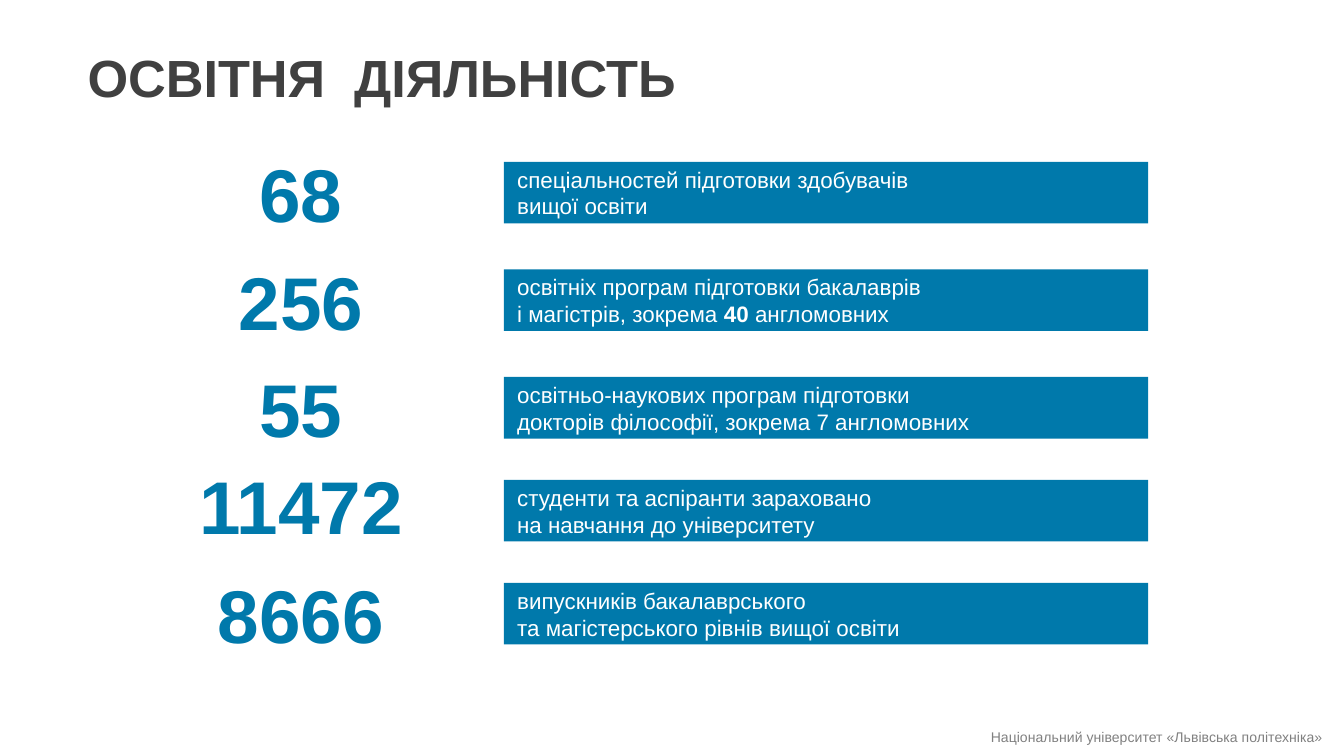
from copy import deepcopy

from pptx import Presentation
from pptx import util as u
from pptx.dml.color import RGBColor
from pptx.enum import shapes, text
from pptx.oxml import ns

COLORS = {"blue": "0079AB", "title": "404040", "footer": "808080", "white": "FFFFFF"}
FONT = "Arial"
TIGHT = (3, 1.5)
WIDE = (7.2, 3.6)
ROWS = [
    (86.7, "68", 1, "спеціальностей підготовки здобувачів\vвищої освіти"),
    (144.3, "256", 1, "освітніх програм підготовки бакалаврів\v"
                      "і магістрів, зокрема *40 *англомовних"),
    (202, "55", 1, "освітньо-наукових програм підготовки\n"
                   "докторів філософії, зокрема 7 англомовних"),
    (257.1, "11472", 0.9, "студенти та аспіранти зараховано\vна навчання до університету"),
    (312.3, "8666", 1, "випускників бакалаврського\vта магістерського рівнів вищої освіти"),
]


def points(*lengths):
    """Turn plain numbers into lengths in points."""
    return [u.Pt(length) for length in lengths]


def write(box, words, size, color, bold=False, align="LEFT", anchor="MIDDLE", pad=TIGHT, wrap=True):
    """Fill a shape with text; parts between asterisks turn bold."""
    frame = box.text_frame
    frame.auto_size = text.MSO_AUTO_SIZE.NONE
    frame.word_wrap = wrap
    frame.vertical_anchor = text.MSO_ANCHOR[anchor]
    frame.margin_left = frame.margin_right = u.Pt(pad[0])
    frame.margin_top = frame.margin_bottom = u.Pt(pad[1])
    first, *others = words.split("*")
    frame.text = first
    for part in others:
        frame.paragraphs[-1].add_run().text = part
    for para in frame.paragraphs:
        para.alignment = text.PP_ALIGN[align]
        for span in para.runs:
            span.font.name = FONT
            span.font.size = u.Pt(size)
            span.font.bold = bold or span.text in others[::2]
            span.font.color.rgb = RGBColor.from_string(COLORS[color])
        for line_break in para._p.findall(ns.qn("a:br")):
            line_break.insert(0, deepcopy(para.runs[0]._r.rPr))
    return frame


def add_title(page, left, top, width, height):
    """Place the heading in the title placeholder."""
    title = page.shapes.title
    title.left, title.top, title.width, title.height = points(left, top, width, height)
    write(title, "ОСВІТНЯ  ДІЯЛЬНІСТЬ", 28, "title", bold=True, anchor="TOP", wrap=False)


def add_row(page, left, top, width, height, number, spacing, caption):
    """Place a large number and its caption bar, centred on one line."""
    bar_left, number_width, number_height = left + 196.6, 175.7, 51.1 * spacing
    bar = page.shapes.add_shape(
        shapes.MSO_SHAPE.RECTANGLE, *points(bar_left, top, left + width - bar_left, height))
    bar.shadow.inherit = False
    bar.fill.solid()
    bar.fill.fore_color.rgb = RGBColor.from_string(COLORS["blue"])
    bar.line.fill.background()
    write(bar, caption, 12, "white", pad=WIDE)
    number_top = top + (height - number_height) / 2
    figure = page.shapes.add_textbox(*points(left, number_top, number_width, number_height))
    frame = write(figure, number, 40, "blue", bold=True, align="CENTER")
    frame.paragraphs[0].line_spacing = spacing


def add_footer(page, left, top, width, height):
    """Place the raised university name at the lower right."""
    footer = page.shapes.add_textbox(*points(left, top, width, height))
    frame = write(footer, "Національний університет «Львівська політехніка»", 13, "footer",
                  align="RIGHT", anchor="TOP")
    frame.paragraphs[0].runs[0]._r.rPr.set("baseline", "30000")


def main():
    """Build the slide and save it."""
    deck = Presentation()
    deck.slide_width, deck.slide_height = points(720, 405)
    page = deck.slides.add_slide(deck.slide_layouts[5])
    add_footer(page, 467.3, 387.4, 244.1, 13.7)
    add_title(page, 43.9, 23, 324, 36.7)
    for top, number, spacing, caption in ROWS:
        add_row(page, 73.4, top, 541.7, 33, number, spacing, caption)
    deck.save("out.pptx")


if __name__ == "__main__":
    main()
